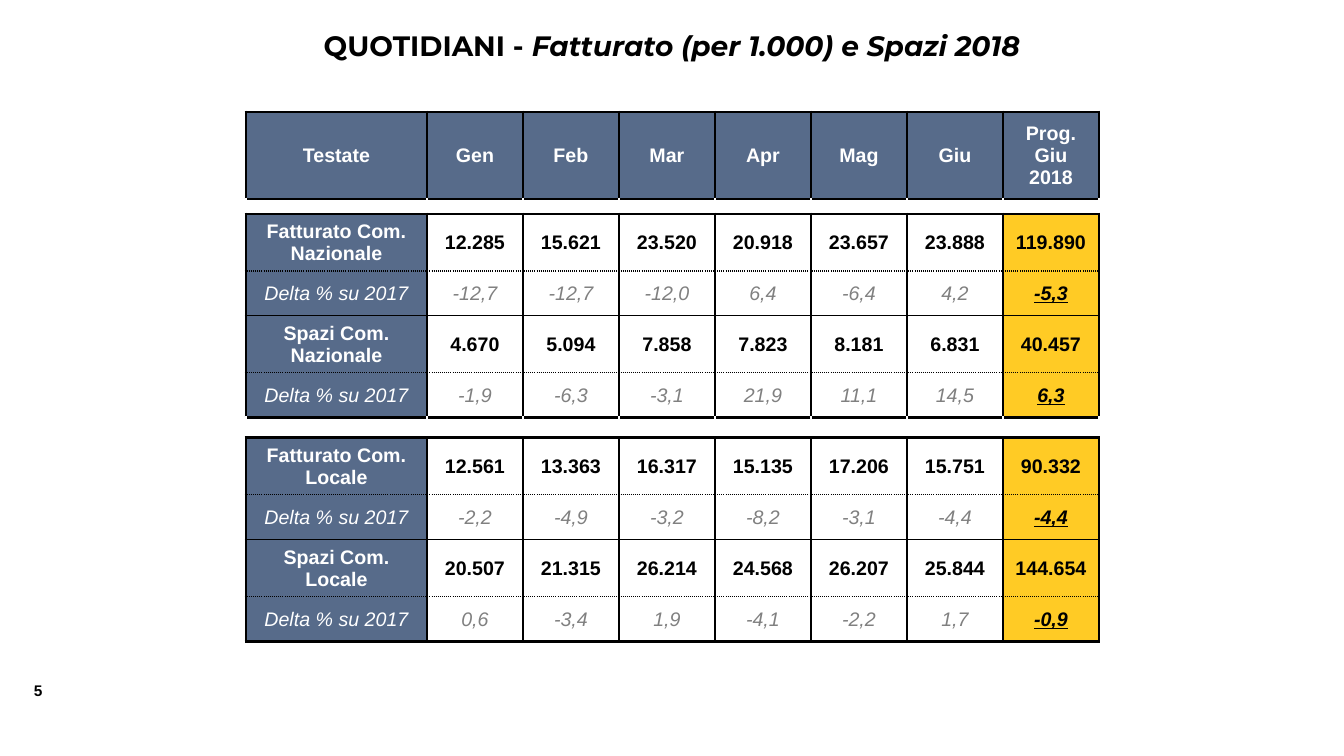
from lxml.etree import SubElement
from pptx import Presentation
from pptx.dml.color import RGBColor
from pptx.enum.text import MSO_ANCHOR, PP_ALIGN
from pptx.oxml.ns import qn

TITLE = [("QUOTIDIANI - ", False), ("Fatturato (per 1.000) e Spazi 2018", True)]
PAGE_NUMBER = "5"
HEADER = ["Testate", "Gen", "Feb", "Mar", "Apr", "Mag", "Giu", "Prog.\nGiu 2018"]
DELTA = "Delta % su 2017"
NATIONAL = [
    ["Fatturato Com. Nazionale", "12.285", "15.621", "23.520", "20.918", "23.657", "23.888", "119.890"],
    [DELTA, "-12,7", "-12,7", "-12,0", "6,4", "-6,4", "4,2", "-5,3"],
    ["Spazi Com. Nazionale", "4.670", "5.094", "7.858", "7.823", "8.181", "6.831", "40.457"],
    [DELTA, "-1,9", "-6,3", "-3,1", "21,9", "11,1", "14,5", "6,3"],
]
LOCAL = [
    ["Fatturato Com. Locale", "12.561", "13.363", "16.317", "15.135", "17.206", "15.751", "90.332"],
    [DELTA, "-2,2", "-4,9", "-3,2", "-8,2", "-3,1", "-4,4", "-4,4"],
    ["Spazi Com. Locale", "20.507", "21.315", "26.214", "24.568", "26.207", "25.844", "144.654"],
    [DELTA, "0,6", "-3,4", "1,9", "-4,1", "-2,2", "1,7", "-0,9"],
]
GAP = [""] * len(HEADER)
ROWS = [HEADER, GAP, *NATIONAL, GAP, *LOCAL]

BLOCK_HEIGHTS = [57, 45, 57, 45]
ROW_HEIGHTS = [87, 15, *BLOCK_HEIGHTS, 20, *BLOCK_HEIGHTS]
COLUMN_WIDTHS = [181] + [96] * 7
SLIDE_SIZE = (1344, 756)
TITLE_BOX = (168, 23, 1008, 44)
NUMBER_BOX = (24, 676, 42, 29)
TABLE_ORIGIN = (246, 112)

BLACK, WHITE, GREY, BLUE, YELLOW = "000000", "FFFFFF", "808080", "576B8A", "FFCB25"
HEAVY, THIN, DOTTED = (2.25, "solid"), (1, "solid"), (1, "sysDot")
BLOCK_EDGES = [HEAVY, DOTTED, THIN, DOTTED, HEAVY]
EDGES = [HEAVY, *BLOCK_EDGES, *BLOCK_EDGES]
EDGES.insert(1, HEAVY)


def px(length):
    """Turn pixels into EMU."""
    return round(length * 914400 / 100.8)


def color(value):
    """Turn a hex string into a colour."""
    return RGBColor.from_string(value)


def set_values(target, values):
    """Set attributes from a dict."""
    for name, value in values.items():
        setattr(target, name, value)


def style_run(run, size, fill, name="Arial", **values):
    """Format one run of text."""
    set_values(run.font, {"name": name, "size": round(size * 12700), **values})
    run.font.color.rgb = color(fill)


def place(shape, box):
    """Position a text shape and set up its frame."""
    set_values(shape, dict(zip(("left", "top", "width", "height"), map(px, box))))
    set_values(shape.text_frame, {"word_wrap": True, "vertical_anchor": MSO_ANCHOR.MIDDLE})


def add_border(cell, side, line, fill):
    """Draw one side of a cell."""
    width, dash = line
    border = SubElement(cell._tc.get_or_add_tcPr(), qn(f"a:ln{side}"), w=str(round(width * 12700)))
    SubElement(SubElement(border, qn("a:solidFill")), qn("a:srgbClr"), val=fill)
    SubElement(border, qn("a:prstDash"), val=dash)


def cell_style(row, column):
    """Return the fill and the font values of a filled cell."""
    delta = ROWS[row][0] == DELTA
    if row == 0 or column == 0:
        return BLUE, WHITE, {"bold": not delta, "italic": delta}
    if column == len(HEADER) - 1:
        return YELLOW, BLACK, {"bold": True, "italic": delta, "underline": delta}
    return None, GREY if delta else BLACK, {"bold": not delta, "italic": delta}


def fill_cell(cell, row, column):
    """Write and format one cell."""
    text = ROWS[row][column]
    gap = ROWS[row] is GAP
    fill, text_color, values = (WHITE, BLACK, {}) if gap else cell_style(row, column)
    side, end = (10, 5) if fill == BLUE else (0, 0)
    set_values(cell, {
        "margin_left": px(side), "margin_right": px(side),
        "margin_top": px(end), "margin_bottom": px(end),
        "vertical_anchor": MSO_ANCHOR.MIDDLE,
    })
    for name in "LR":
        add_border(cell, name, HEAVY, WHITE if gap else BLACK)
    add_border(cell, "T", EDGES[row], BLACK)
    add_border(cell, "B", EDGES[row + 1], BLACK)
    if fill:
        cell.fill.solid()
        cell.fill.fore_color.rgb = color(fill)
    else:
        cell.fill.background()
    if gap:
        SubElement(cell.text_frame.paragraphs[0]._p, qn("a:endParaRPr"), sz="600")
        return
    cell.text_frame.text = text
    for paragraph in cell.text_frame.paragraphs:
        paragraph.alignment = PP_ALIGN.CENTER
        for run in paragraph.runs:
            style_run(run, 14, text_color, **values)


def add_table(slide):
    """Add the table of revenue and space."""
    frame = slide.shapes.add_table(
        len(ROWS), len(HEADER), *map(px, (*TABLE_ORIGIN, sum(COLUMN_WIDTHS), sum(ROW_HEIGHTS))))
    table = frame.table
    set_values(table, {"first_row": False, "horz_banding": False})
    for column, width in zip(table.columns, COLUMN_WIDTHS):
        column.width = px(width)
    for row, height in zip(table.rows, ROW_HEIGHTS):
        row.height = px(height)
    for row in range(len(ROWS)):
        for column in range(len(HEADER)):
            fill_cell(table.cell(row, column), row, column)


def main():
    """Build the slide."""
    presentation = Presentation()
    presentation.slide_width, presentation.slide_height = map(px, SLIDE_SIZE)
    slide = presentation.slides.add_slide(presentation.slide_layouts[5])

    title = slide.shapes.title
    place(title, TITLE_BOX)
    paragraph = title.text_frame.paragraphs[0]
    paragraph.alignment = PP_ALIGN.CENTER
    for text, italic in TITLE:
        run = paragraph.add_run()
        run.text = text
        style_run(run, 20, BLACK, "Montserrat", bold=True, italic=italic)

    add_table(slide)

    number = slide.shapes.add_textbox(0, 0, 0, 0)
    place(number, NUMBER_BOX)
    number.text_frame.text = PAGE_NUMBER
    style_run(number.text_frame.paragraphs[0].runs[0], 11, BLACK, bold=True)

    presentation.save("out.pptx")


if __name__ == "__main__":
    main()
